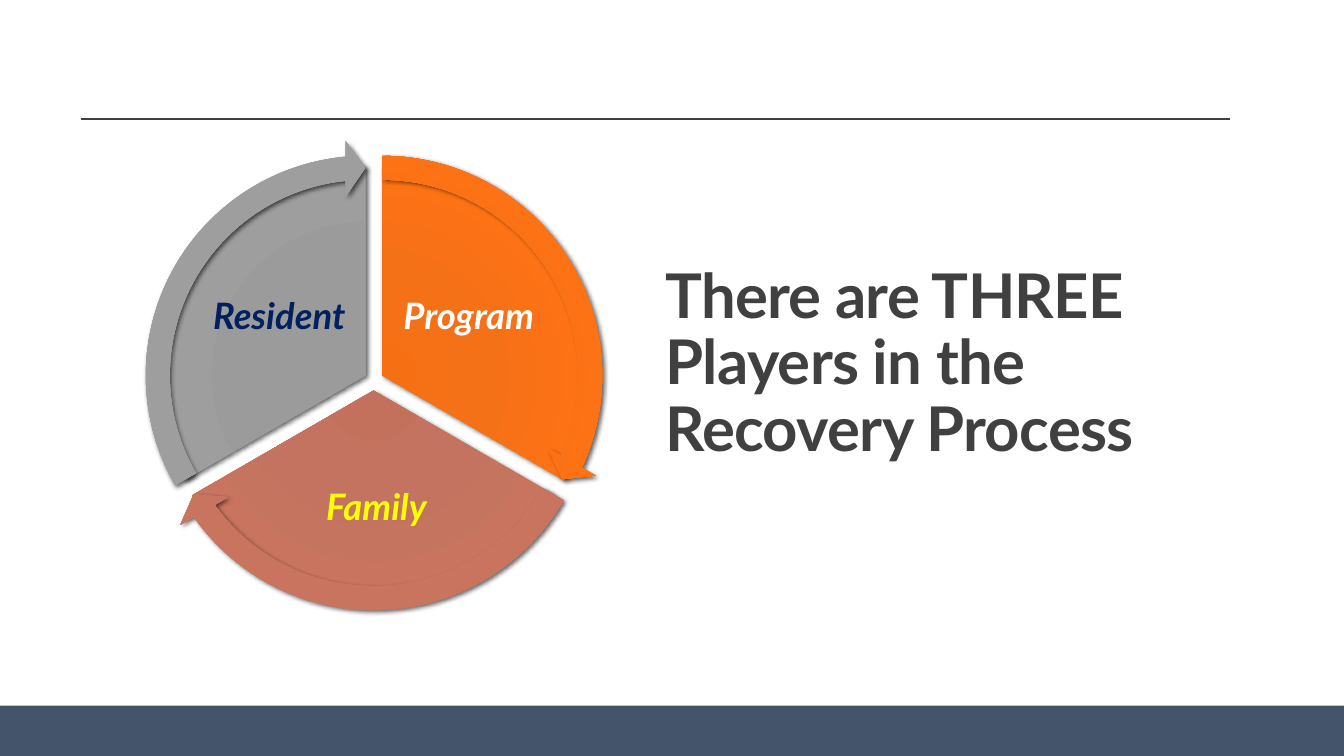
from dataclasses import dataclass

from lxml import etree
from pptx import Presentation
from pptx.dml.color import RGBColor
from pptx.enum import shapes, text
from pptx.oxml import parse_xml
from pptx.oxml.ns import nsdecls, qn
from pptx.util import Inches, Pt


@dataclass(frozen=True)
class Theme:
    font: str = "Lato"
    title_size: int = 44
    label_size: int = 26
    ink: str = "404040"
    band: str = "44546A"
    shadow: str = "000000"


@dataclass(frozen=True)
class Player:
    """One third of the wheel; angles are in degrees clockwise from the right."""
    name: str
    text_color: str
    gradient: tuple[str, str, str, str]
    start: int
    end: int
    corner: tuple[float, float]
    label_box: tuple[float, float, float, float]


THEME = Theme()
GRADIENT_STOPS = (0, 34, 70, 100)
WEDGE_SIZE = 4.15
ARROW_SIZE = 4.67
ARROW_OFFSET = (WEDGE_SIZE - ARROW_SIZE) / 2
ARROW_THICKNESS, ARROW_HEAD_WIDTH = 0.051, 0.059
ARROW_HEAD_ANGLE = 3.275
ANGLE_UNIT = 0.6  # adjustment value of one degree

PLAYERS = (
    Player("Program", "FFFFFF", ("F76F13", "F57118", "FD7214", "F67B28"),
           270, 30, (1.72, 1.65), (3.91, 2.53, 1.48, 1.24)),
    Player("Family", "FFFF00", ("C3715C", "C3735F", "C8745E", "C97E6B"),
           30, 150, (1.63, 1.8), (2.62, 4.5, 2.23, 1.09)),
    Player("Resident", "002060", ("9A9A9A", "9B9B9B", "9E9E9E", "A5A5A5"),
           150, 270, (1.55, 1.65), (2.03, 2.53, 1.48, 1.24)),
)


def format_run(r, size: int, color: str, italic: bool = False) -> None:
    r.font.name = THEME.font
    r.font.size = Pt(size)
    r.font.bold = True
    r.font.italic = italic
    r.font.color.rgb = RGBColor.from_string(color)


def style_part(sp, gradient: tuple[str, ...]) -> None:
    """Give a wheel part its radial gradient, no outline and a soft shadow."""
    stops = "".join(
        f'<a:gs pos="{pos * 1000}"><a:srgbClr val="{color}"/></a:gs>'
        for pos, color in zip(GRADIENT_STOPS, gradient))
    sp_pr = sp._element.spPr
    sp_pr.append(parse_xml(
        f'<a:gradFill {nsdecls("a")} rotWithShape="1"><a:gsLst>{stops}</a:gsLst>'
        '<a:path path="circle"><a:fillToRect l="100000" t="100000" '
        'r="100000" b="100000"/></a:path></a:gradFill>'))
    sp.line.fill.background()
    sp_pr.append(parse_xml(
        f'<a:effectLst {nsdecls("a")}><a:outerShdw blurRad="{Pt(3.5)}" '
        f'dist="{Pt(2)}" dir="2700000" algn="br" rotWithShape="0">'
        f'<a:srgbClr val="{THEME.shadow}"><a:alpha val="60000"/></a:srgbClr>'
        '</a:outerShdw></a:effectLst>'))


def add_part(slide, kind, left: float, top: float, size: float,
             adjustments: tuple[float, ...], gradient: tuple[str, ...]) -> None:
    sp = slide.shapes.add_shape(
        kind, Inches(left), Inches(top), Inches(size), Inches(size))
    for i, value in enumerate(adjustments):
        sp.adjustments[i] = value
    style_part(sp, gradient)


def add_wedge(slide, player: Player) -> None:
    add_part(slide, shapes.MSO_SHAPE.PIE, *player.corner, WEDGE_SIZE,
             (player.start * ANGLE_UNIT, player.end * ANGLE_UNIT), player.gradient)


def add_arrow(slide, player: Player) -> None:
    left, top = (c + ARROW_OFFSET for c in player.corner)
    adjustments = (ARROW_THICKNESS, ARROW_HEAD_ANGLE,
                   player.end * ANGLE_UNIT - ARROW_HEAD_ANGLE,
                   player.start * ANGLE_UNIT, ARROW_HEAD_WIDTH)
    add_part(slide, shapes.MSO_SHAPE.CIRCULAR_ARROW, left, top, ARROW_SIZE,
             adjustments, player.gradient)


def add_label(slide, player: Player) -> None:
    tf = slide.shapes.add_textbox(*map(Inches, player.label_box)).text_frame
    tf.word_wrap = True
    tf.vertical_anchor = text.MSO_ANCHOR.MIDDLE
    tf.margin_left = tf.margin_right = tf.margin_top = tf.margin_bottom = Inches(0.04)
    tf.text = player.name
    p = tf.paragraphs[0]
    p.alignment = text.PP_ALIGN.CENTER
    p.line_spacing = 0.9
    format_run(p.runs[0], THEME.label_size, player.text_color, italic=True)


def add_frame(slide) -> None:
    """Draw the rule at the top and the band at the foot."""
    band = slide.shapes.add_shape(
        shapes.MSO_SHAPE.RECTANGLE, 0, Inches(7), Inches(13.33), Inches(0.5))
    band.shadow.inherit = False
    band.fill.solid()
    band.fill.fore_color.rgb = RGBColor.from_string(THEME.band)
    band.line.fill.background()

    rule = slide.shapes.add_connector(
        shapes.MSO_CONNECTOR.STRAIGHT,
        Inches(0.8), Inches(1.18), Inches(12.2), Inches(1.18))
    rule.line.color.rgb = RGBColor.from_string(THEME.ink)
    rule.line.width = Pt(1)
    etree.SubElement(rule._element.spPr, qn("a:effectLst"))


def set_title(slide, wording: str) -> None:
    title = slide.shapes.title
    title.left, title.top = Inches(6.5), Inches(2.33)
    title.width, title.height = Inches(5.87), Inches(2.33)
    tf = title.text_frame
    tf.text = wording
    tf.word_wrap = True
    tf.auto_size = text.MSO_AUTO_SIZE.NONE
    tf.vertical_anchor = text.MSO_ANCHOR.BOTTOM
    p = tf.paragraphs[0]
    p.alignment = text.PP_ALIGN.LEFT
    p.line_spacing = 0.9
    r = p.runs[0]
    format_run(r, THEME.title_size, THEME.ink)
    r._r.get_or_add_rPr().set("spc", "-50")


def main() -> None:
    prs = Presentation()
    prs.slide_width, prs.slide_height = Inches(13.33), Inches(7.5)
    slide = prs.slides.add_slide(prs.slide_layouts.get_by_name("Title Only"))
    add_frame(slide)
    set_title(slide, "There are THREE Players in the Recovery Process")
    for player in PLAYERS:
        add_wedge(slide, player)
        add_label(slide, player)
    for player in PLAYERS:
        add_arrow(slide, player)
    prs.save("out.pptx")


if __name__ == "__main__":
    main()
